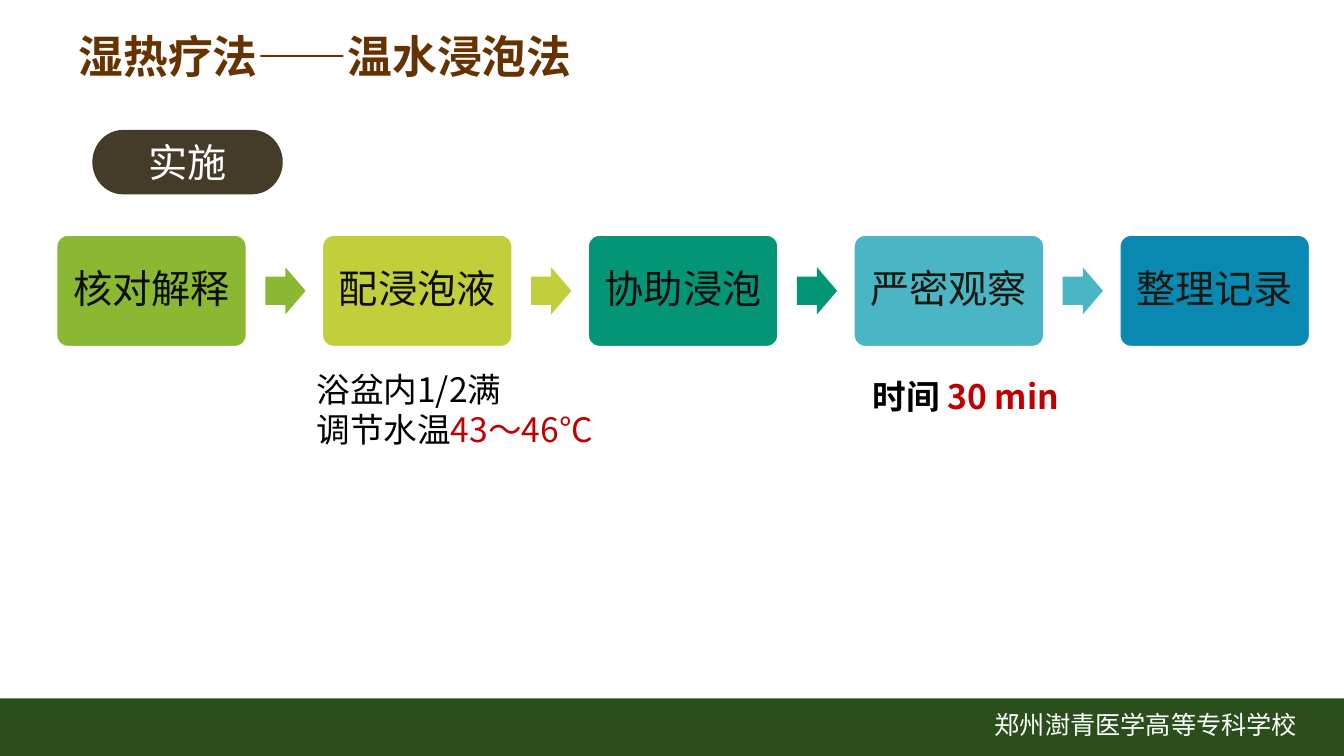
from lxml import etree
from pptx import Presentation
from pptx.dml.color import RGBColor
from pptx.enum.shapes import MSO_SHAPE
from pptx.enum.text import MSO_ANCHOR, PP_ALIGN
from pptx.oxml.ns import qn
from pptx.util import Pt

RECTANGLE = MSO_SHAPE.RECTANGLE
ROUNDED = MSO_SHAPE.ROUNDED_RECTANGLE
TERMINATOR = MSO_SHAPE.FLOWCHART_TERMINATOR
ARROW = MSO_SHAPE.RIGHT_ARROW
MIDDLE, TOP = MSO_ANCHOR.MIDDLE, MSO_ANCHOR.TOP
CENTER, LEFT = PP_ALIGN.CENTER, PP_ALIGN.LEFT

COLORS = {
    "footer": "2A4F1C", "title": "663300", "section": "443C29",
    "white": "FFFFFF", "black": "000000", "accent": "C00000",
    "ink": "0D0D0D", "umber": "1B1810",
    "green": "8AB833", "lime": "C0CF3A", "teal": "029676",
    "aqua": "4AB5C4", "blue": "0989B1",
}
CJK_FONT = "Noto Sans CJK SC"
LATIN_FONT = "Arial"

TITLE = "湿热疗法——温水浸泡法"
SECTION = "实施"
SCHOOL = "郑州澍青医学高等专科学校"
STEPS = [
    ("核对解释", "green", "ink"),
    ("配浸泡液", "lime", "ink"),
    ("协助浸泡", "teal", "ink"),
    ("严密观察", "aqua", "umber"),
    ("整理记录", "blue", "umber"),
]
SOAK_NOTE = [[("浴盆内1/2满", "black")], [("调节水温", "black"), ("43～46℃", "accent")]]
TIME_NOTE = [[("时间 ", "black"), ("30 min", "accent")]]

SLIDE_WIDTH, SLIDE_HEIGHT = 960, 540
STEP_LEFT, STEP_TOP, STEP_WIDTH, STEP_HEIGHT = 40.5, 168, 135.5, 79.5
STEP_PITCH = 189.85
ARROW_OFFSET, ARROW_WIDTH, ARROW_HEIGHT = 149, 28.8, 33.6


def write(shape, paragraphs, size, font=LATIN_FONT, bold=False, align=LEFT,
          anchor=TOP, spacing=1.0, inset=7.2):
    """Fill a shape with paragraphs made of (text, color name) spans."""
    frame = shape.text_frame
    frame.word_wrap = True
    frame.vertical_anchor = anchor
    frame.margin_left = frame.margin_right = Pt(inset)
    frame.margin_top = frame.margin_bottom = Pt(3.6)
    for index, spans in enumerate(paragraphs):
        para = frame.add_paragraph() if index else frame.paragraphs[0]
        para.alignment = align
        para.line_spacing = spacing
        for text, color in spans:
            span = para.add_run()
            span.text = text
            span.font.size = Pt(size)
            span.font.bold = bold
            span.font.color.rgb = RGBColor.from_string(COLORS[color])
            span.font.name = font
            east_asian = etree.SubElement(span.font._element, qn("a:ea"))
            east_asian.set("typeface", CJK_FONT)


def add_box(page, kind, left, top, width, height, fill, line=None):
    """Add a flat filled shape, outlined only when a line color is given."""
    shape = page.shapes.add_shape(kind, Pt(left), Pt(top), Pt(width), Pt(height))
    shape.shadow.inherit = False
    shape.fill.solid()
    shape.fill.fore_color.rgb = RGBColor.from_string(COLORS[fill])
    if line:
        shape.line.color.rgb = RGBColor.from_string(COLORS[line])
        shape.line.width = Pt(1)
    else:
        shape.line.fill.background()
    return shape


def add_label(page, left, top, width, height, paragraphs, size, **style):
    """Add a text box and write into it."""
    box = page.shapes.add_textbox(Pt(left), Pt(top), Pt(width), Pt(height))
    write(box, paragraphs, size, **style)


def add_steps(page):
    """Lay out the step boxes at an equal pitch with arrows between them."""
    arrow_top = STEP_TOP + (STEP_HEIGHT - ARROW_HEIGHT) / 2
    for index, (name, fill, ink) in enumerate(STEPS):
        left = STEP_LEFT + index * STEP_PITCH
        step = add_box(page, ROUNDED, left, STEP_TOP, STEP_WIDTH, STEP_HEIGHT, fill, "white")
        step.adjustments[0] = 0.1
        write(step, [[(name, ink)]], 28, align=CENTER, anchor=MIDDLE, spacing=0.9)
        if index < len(STEPS) - 1:
            arrow = add_box(page, ARROW, left + ARROW_OFFSET, arrow_top,
                            ARROW_WIDTH, ARROW_HEIGHT, fill)
            arrow.adjustments[0] = 0.6
            arrow.adjustments[1] = 0.5


def main():
    """Build the slide and save it."""
    deck = Presentation()
    deck.slide_width, deck.slide_height = Pt(SLIDE_WIDTH), Pt(SLIDE_HEIGHT)
    page = deck.slides.add_slide(deck.slide_layouts[6])

    add_box(page, RECTANGLE, 0, 498.8, SLIDE_WIDTH, SLIDE_HEIGHT - 498.8, "footer")
    add_label(page, 703.4, 503.3, 232.6, 36.7, [[(SCHOOL, "white")]], 18, font=CJK_FONT)
    add_label(page, 49, 17.3, 612, 46, [[(TITLE, "title")]], 32, bold=True)
    section = add_box(page, TERMINATOR, 66, 92.8, 136, 46, "section")
    write(section, [[(SECTION, "white")]], 28, align=CENTER, anchor=MIDDLE)

    add_steps(page)
    add_label(page, 219, 260, 212.4, 65.5, SOAK_NOTE, 24, font=CJK_FONT)
    add_label(page, 616.3, 250.6, 212.4, 46, TIME_NOTE, 24, font=CJK_FONT,
              bold=True, spacing=1.5)
    deck.save("out.pptx")


if __name__ == "__main__":
    main()
